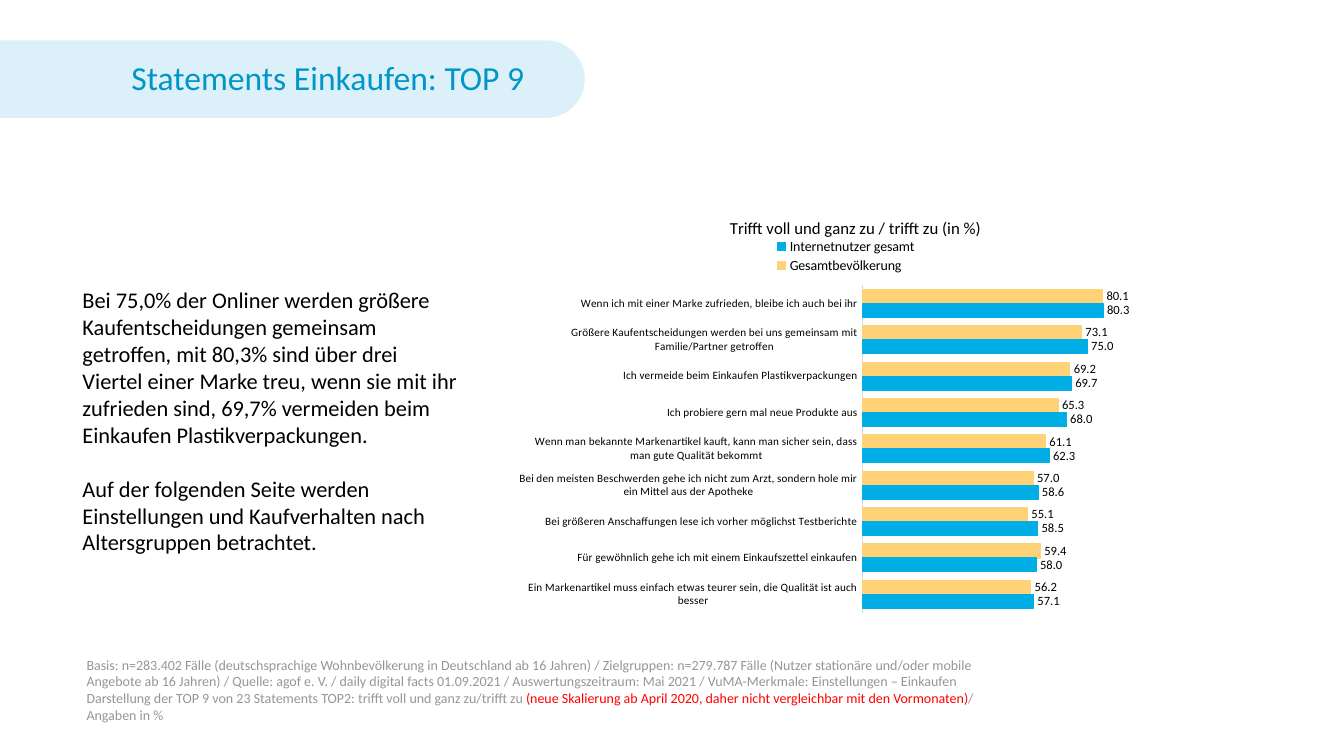
from pptx import Presentation
from pptx.chart.data import CategoryChartData
from pptx.dml.color import RGBColor
from pptx.enum.chart import XL_CHART_TYPE as CHART, XL_LABEL_POSITION as LABEL
from pptx.enum.chart import XL_LEGEND_POSITION as LEGEND, XL_TICK_MARK as TICK
from pptx.enum.shapes import MSO_SHAPE as SHAPE
from pptx.enum.text import MSO_ANCHOR as ANCHOR, PP_ALIGN as ALIGN
from pptx.oxml import parse_xml
from pptx.oxml.ns import nsdecls
from pptx.util import Inches, Pt

FONT = "Calibri"
BLACK, GREY, RED = "000000", "969696", "FF0000"
TITLE_BLUE, PALE_BLUE = "0096C8", "DCF0FA"
NUMBER_FORMAT = "#,##0.0"

FINDINGS = [
    "Bei 75,0% der Onliner werden größere Kaufentscheidungen gemeinsam getroffen, "
    "mit 80,3% sind über drei Viertel einer Marke treu, wenn sie mit ihr zufrieden sind, "
    "69,7% vermeiden beim Einkaufen Plastikverpackungen.",
    "Auf der folgenden Seite werden Einstellungen und Kaufverhalten nach "
    "Altersgruppen betrachtet.",
]
BASIS = [
    ("Basis: n=283.402 Fälle (deutschsprachige Wohnbevölkerung in Deutschland ab 16 Jahren) / "
     "Zielgruppen: n=279.787 Fälle (Nutzer stationäre und/oder mobile Angebote ab 16 Jahren) / "
     "Quelle: agof e. V. / daily digital facts 01.09.2021 / Auswertungszeitraum: Mai 2021 / "
     "VuMA-Merkmale: Einstellungen – Einkaufen Darstellung der TOP 9 von 23 Statements TOP2: "
     "trifft voll und ganz zu/trifft zu ", GREY),
    ("(neue Skalierung ab April 2020, daher nicht vergleichbar mit den Vormonaten)", RED),
    ("/ Angaben in %", GREY),
]
STATEMENTS = [
    ("Wenn ich mit einer Marke zufrieden, bleibe ich auch bei ihr", 80.1, 80.3),
    ("Größere Kaufentscheidungen werden bei uns gemeinsam mit Familie/Partner getroffen",
     73.1, 75.0),
    ("Ich vermeide beim Einkaufen Plastikverpackungen", 69.2, 69.7),
    ("Ich probiere gern mal neue Produkte aus", 65.3, 68.0),
    ("Wenn man bekannte Markenartikel kauft, kann man sicher sein, dass man gute Qualität "
     "bekommt", 61.1, 62.3),
    ("Bei den meisten Beschwerden gehe ich nicht zum Arzt, sondern hole mir ein Mittel aus "
     "der Apotheke", 57.0, 58.6),
    ("Bei größeren Anschaffungen lese ich vorher möglichst Testberichte", 55.1, 58.5),
    ("Für gewöhnlich gehe ich mit einem Einkaufszettel einkaufen", 59.4, 58.0),
    ("Ein Markenartikel muss einfach etwas teurer sein, die Qualität ist auch besser",
     56.2, 57.1),
]
GROUPS = [("Gesamtbevölkerung", "FFD278"), ("Internetnutzer gesamt", "00ADE4")]


def rgb(color):
    return RGBColor.from_string(color)


def set_font(font, size, color=BLACK):
    font.name, font.size, font.bold = FONT, Pt(size), False
    font.color.rgb = rgb(color)


def add_run(p, text, size, color=BLACK):
    r = p.add_run()
    r.text = text
    set_font(r.font, size, color)


def add_text(s, box, paragraphs, size, anchor=ANCHOR.TOP, gap=0):
    """Each paragraph is a list of (text, color) runs."""
    tf = s.shapes.add_textbox(*map(Inches, box)).text_frame
    tf.word_wrap, tf.vertical_anchor = True, anchor
    for i, runs in enumerate(paragraphs):
        p = tf.add_paragraph() if i else tf.paragraphs[0]
        if i:
            p.space_before = Pt(gap)
        for text, color in runs:
            add_run(p, text, size, color)


def add_title(s, text):
    top, height, right = 0.4, 0.77, 5.8
    pill = s.shapes.add_shape(SHAPE.ROUNDED_RECTANGLE, Inches(-6.13), Inches(top),
                              Inches(right + 6.13), Inches(height))
    pill.adjustments[0] = 0.5
    pill.shadow.inherit = False
    pill.fill.solid()
    pill.fill.fore_color.rgb = rgb(PALE_BLUE)
    pill.line.fill.background()

    title = s.shapes.title
    title.element.addprevious(pill.element)
    title.left, title.top = Inches(0), Inches(top)
    title.width, title.height = Inches(right), Inches(height)
    tf = title.text_frame
    tf.vertical_anchor, tf.margin_right = ANCHOR.MIDDLE, Inches(0.6)
    p = tf.paragraphs[0]
    p.alignment, p.line_spacing = ALIGN.RIGHT, 0.9
    add_run(p, text, 24, TITLE_BLUE)


def place(chart, tag, index, inner=False, **fractions):
    """Give a chart part a manual layout, in fractions of the chart's size."""
    part = chart.element.xpath(f".//c:{tag}")[0]
    for old in part.xpath("./c:layout"):
        part.remove(old)
    target = '<c:layoutTarget val="inner"/>' if inner else ""
    modes = '<c:xMode val="edge"/><c:yMode val="edge"/>'
    values = "".join(f'<c:{k} val="{v}"/>' for k, v in fractions.items())
    part.insert(index, parse_xml(
        f'<c:layout {nsdecls("c")}><c:manualLayout>{target}{modes}{values}'
        "</c:manualLayout></c:layout>"))


def format_axes(chart):
    axis = chart.category_axis
    axis.reverse_order = True
    axis.major_tick_mark = axis.minor_tick_mark = TICK.NONE
    axis.format.line.color.rgb = rgb("D9D9D9")
    axis.format.line.width = Pt(0.75)
    set_font(axis.tick_labels.font, 8)
    axis = chart.value_axis
    axis.visible = axis.has_major_gridlines = False
    axis.minimum_scale, axis.maximum_scale = 0, 90


def format_series(series, color):
    series.format.fill.solid()
    series.format.fill.fore_color.rgb = rgb(color)
    series.format.line.color.rgb = rgb(color)
    series.format.line.width = Pt(0.75)
    labels = series.data_labels
    labels.show_value, labels.position = True, LABEL.OUTSIDE_END
    labels.number_format, labels.number_format_is_linked = NUMBER_FORMAT, False
    set_font(labels.font, 9)


def add_bar_chart(s, box, title):
    names, *columns = zip(*STATEMENTS)
    data = CategoryChartData(number_format=NUMBER_FORMAT)
    data.categories = names
    for (group, _), values in zip(GROUPS, columns):
        data.add_series(group, values)
    chart = s.shapes.add_chart(CHART.BAR_CLUSTERED, *map(Inches, box), data).chart
    set_font(chart.font, 8)

    chart.has_title = True
    add_run(chart.chart_title.text_frame.paragraphs[0], title, 12)
    chart.has_legend = True
    chart.legend.position = LEGEND.TOP
    chart.legend.include_in_layout = False
    set_font(chart.legend.font, 10)

    format_axes(chart)
    plot = chart.plots[0]
    plot.gap_width, plot.overlap, plot.vary_by_categories = 60, 0, False
    for series, (_, color) in zip(plot.series, GROUPS):
        format_series(series, color)

    place(chart, "title", 1, x=0.32, y=0.04)
    place(chart, "legend", 1, x=0.39, y=0.09, w=0.23, h=0.09)
    place(chart, "plotArea", 0, inner=True, x=0.53, y=0.2, w=0.42, h=0.73)


def main():
    prs = Presentation()
    prs.slide_width, prs.slide_height = Inches(13.33), Inches(7.5)
    s = prs.slides.add_slide(prs.slide_layouts[5])
    add_title(s, "Statements Einkaufen: TOP 9")
    add_text(s, (0.72, 1.95, 3.94, 4.45), [[(text, BLACK)] for text in FINDINGS], 16,
             anchor=ANCHOR.MIDDLE, gap=19.5)
    add_text(s, (0.76, 6.46, 9.42, 0.68), [BASIS], 10)
    add_bar_chart(s, (5.15, 1.94, 6.4, 4.45), "Trifft voll und ganz zu / trifft zu (in %)")
    prs.save("out.pptx")


if __name__ == "__main__":
    main()
